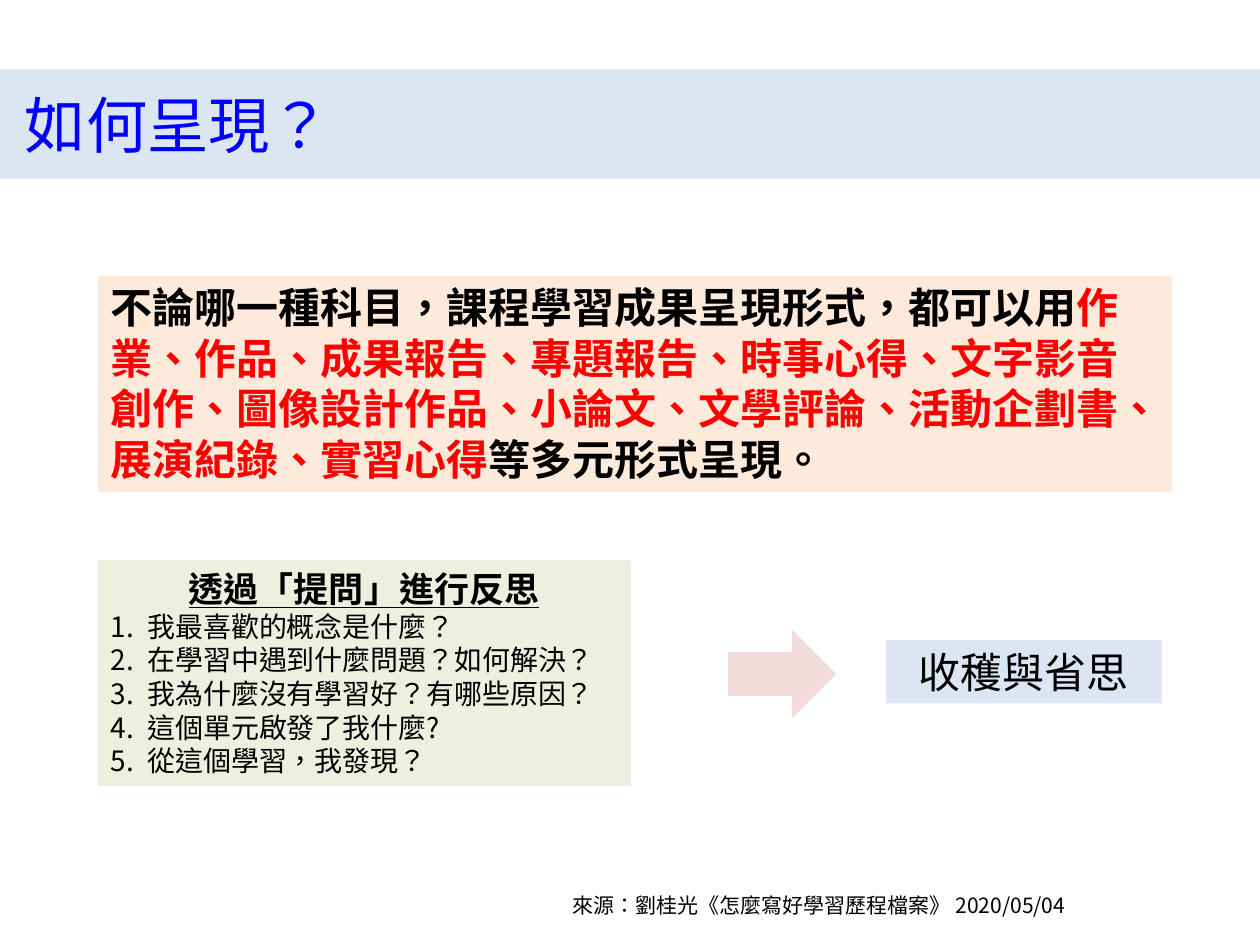
from dataclasses import dataclass

from lxml import etree
from pptx import Presentation
from pptx import util as u
from pptx.dml.color import RGBColor
from pptx.enum import shapes, text
from pptx.oxml import ns

FONT = "Noto Sans CJK SC"
BLACK = RGBColor(0x00, 0x00, 0x00)
BLUE = RGBColor(0x00, 0x00, 0xFF)
RED = RGBColor(0xFF, 0x00, 0x00)
PALE_BLUE = RGBColor(0xDC, 0xE6, 0xF2)
PALE_ORANGE = RGBColor(0xFD, 0xEA, 0xDA)
PALE_GREEN = RGBColor(0xEB, 0xF1, 0xDE)
PALE_RED = RGBColor(0xF2, 0xDC, 0xDB)


@dataclass
class Area:
    """Position and size in centimetres."""
    left: float
    top: float
    width: float
    height: float

    def lengths(self):
        return [u.Cm(v) for v in (self.left, self.top, self.width, self.height)]


@dataclass
class Panel:
    area: Area
    fill: RGBColor
    preset: shapes.MSO_SHAPE = shapes.MSO_SHAPE.RECTANGLE


def write(paragraph, words: str, size: float, color: RGBColor = BLACK,
          bold: bool = False, underline: bool = False, align=text.PP_ALIGN.LEFT):
    """Append one formatted run to a paragraph."""
    paragraph.alignment = align
    paragraph.space_before = u.Pt(0)
    run = paragraph.add_run()
    run.text = words
    font = run.font
    font.name, font.size, font.bold, font.underline = FONT, u.Pt(size), bold, underline
    font.color.rgb = color
    properties = run._r.get_or_add_rPr()
    properties.set("lang", "zh-TW")
    etree.SubElement(properties, ns.qn("a:ea"), typeface=FONT)


def set_bullet(paragraph, numbered: bool, indent: float = 0):
    """Number a list paragraph, or take its bullet away."""
    properties = paragraph._p.get_or_add_pPr()
    properties.set("marL", str(u.Cm(indent)))
    properties.set("indent", str(-u.Cm(indent)))
    if numbered:
        etree.SubElement(properties, ns.qn("a:buFont"), typeface=FONT)
        etree.SubElement(properties, ns.qn("a:buAutoNum"), type="arabicPeriod")
    else:
        etree.SubElement(properties, ns.qn("a:buNone"))


def prepare_frame(shape, anchor=text.MSO_ANCHOR.TOP):
    frame = shape.text_frame
    frame.word_wrap = True
    frame.auto_size = text.MSO_AUTO_SIZE.NONE
    frame.vertical_anchor = anchor
    return frame


def place(placeholder, area: Area, fill: RGBColor):
    placeholder.left, placeholder.top, placeholder.width, placeholder.height = area.lengths()
    placeholder.fill.solid()
    placeholder.fill.fore_color.rgb = fill


def draw_panel(slide, panel: Panel):
    shape = slide.shapes.add_shape(panel.preset, *panel.area.lengths())
    shape.shadow.inherit = False
    shape.fill.solid()
    shape.fill.fore_color.rgb = panel.fill
    shape.line.fill.background()
    return prepare_frame(shape)


QUESTIONS = [
    "我最喜歡的概念是什麼？",
    "在學習中遇到什麼問題？如何解決？",
    "我為什麼沒有學習好？有哪些原因？",
    "這個單元啟發了我什麼?",
    "從這個學習，我發現？",
]
FORMS = [
    ("不論哪一種科目，課程學習成果呈現形式，都可以用", BLACK),
    ("作業、作品、成果報告、專題報告、時事心得、文字影音創作、圖像設計作品、"
     "小論文、文學評論、活動企劃書、展演紀錄、實習心得", RED),
    ("等多元形式呈現。", BLACK),
]


def main():
    deck = Presentation()
    deck.slide_width, deck.slide_height = u.Cm(25.4), u.Cm(19.05)
    slide = deck.slides.add_slide(deck.slide_layouts[1])
    title, reflection = slide.placeholders

    # Title band
    place(title, Area(0, 1.4, 25.4, 2.2), PALE_BLUE)
    heading = prepare_frame(title, text.MSO_ANCHOR.MIDDLE)
    heading.margin_left = u.Cm(0.5)
    heading.margin_top = heading.margin_right = heading.margin_bottom = 0
    write(heading.paragraphs[0], "如何呈現？", 35, color=BLUE)

    # Forms of presentation
    forms = draw_panel(slide, Panel(Area(1.98, 5.56, 21.64, 4.36), PALE_ORANGE))
    for words, color in FORMS:
        write(forms.paragraphs[0], words, 24, color=color, bold=True)

    # Reflection questions
    place(reflection, Area(1.98, 11.31, 10.72, 4.52), PALE_GREEN)
    reflection.line.color.rgb = PALE_GREEN
    reflection.line.width = u.Pt(0.75)
    questions = prepare_frame(reflection)
    write(questions.paragraphs[0], "透過「提問」進行反思", 20, bold=True,
          underline=True, align=text.PP_ALIGN.CENTER)
    set_bullet(questions.paragraphs[0], numbered=False)
    for question in QUESTIONS:
        item = questions.add_paragraph()
        write(item, question, 16)
        set_bullet(item, numbered=True, indent=0.74)

    # Arrow to the outcome
    draw_panel(slide, Panel(Area(14.68, 12.7, 2.18, 1.78), PALE_RED,
                            shapes.MSO_SHAPE.RIGHT_ARROW))
    outcome = draw_panel(slide, Panel(Area(17.86, 12.9, 5.56, 1.28), PALE_BLUE))
    write(outcome.paragraphs[0], "收穫與省思", 24, align=text.PP_ALIGN.CENTER)

    # Source line
    source = slide.shapes.add_textbox(*Area(11.3, 17.86, 12.9, 0.76).lengths())
    write(prepare_frame(source).paragraphs[0],
          "來源：劉桂光《怎麼寫好學習歷程檔案》 2020/05/04", 12)

    deck.save("out.pptx")


if __name__ == "__main__":
    main()
